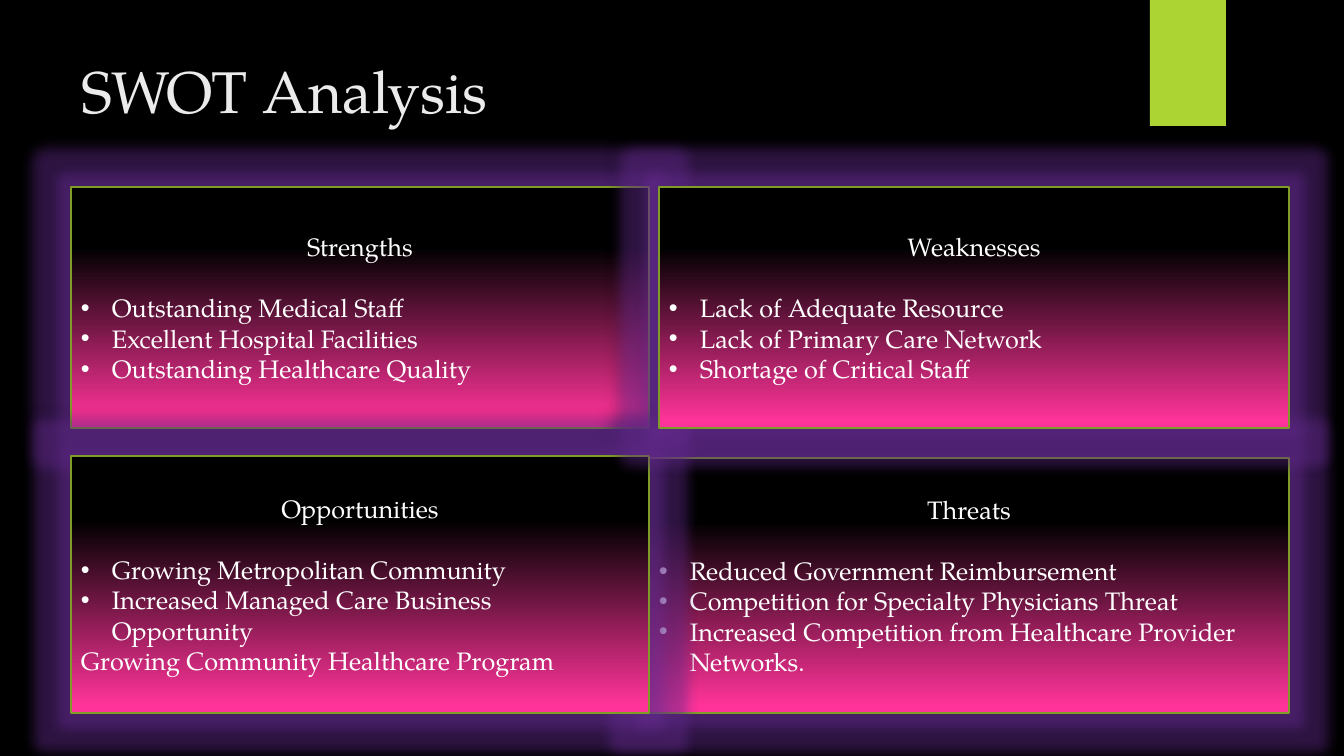
import lxml.etree
import pptx
import pptx.dml.color
import pptx.enum.shapes
import pptx.enum.text
import pptx.oxml.ns
import pptx.util

SCALE = 12192000 / 1344
FONT = "TeX Gyre Pagella"
BLACK = pptx.dml.color.RGBColor(0x00, 0x00, 0x00)
WHITE = pptx.dml.color.RGBColor(0xFF, 0xFF, 0xFF)
PALE = pptx.dml.color.RGBColor(0xEB, 0xEB, 0xEB)
LIME = pptx.dml.color.RGBColor(0xAC, 0xD4, 0x33)
OLIVE = pptx.dml.color.RGBColor(0x7F, 0x9D, 0x26)
PINK = pptx.dml.color.RGBColor(0xFF, 0x33, 0x99)
PURPLE = pptx.dml.color.RGBColor(0x70, 0x30, 0xA0)

QUADRANTS = [
    ("Strengths", (71, 187, 578, 241),
     ["Outstanding Medical Staff", "Excellent Hospital Facilities",
      "Outstanding Healthcare Quality"], ""),
    ("Threats", (649, 458, 640, 255),
     ["Reduced Government Reimbursement",
      "Competition for Specialty Physicians Threat",
      "Increased Competition from Healthcare Provider Networks."], ""),
    ("Opportunities", (71, 456, 578, 257),
     ["Growing Metropolitan Community",
      "Increased Managed Care Business Opportunity"],
     "Growing Community Healthcare Program"),
    ("Weaknesses", (659, 187, 630, 241),
     ["Lack of Adequate Resource", "Lack of Primary Care Network",
      "Shortage of Critical Staff"], ""),
]


def px(length):
    """Turn pixels into EMU."""
    return pptx.util.Emu(round(length * SCALE))


def add_element(parent, tag, **attributes):
    """Append a DrawingML element to its parent and return it."""
    element = lxml.etree.SubElement(parent, pptx.oxml.ns.qn(tag))
    for name, value in attributes.items():
        element.set(name, str(value))
    return element


def style_font(paragraph, size, color):
    """Set the typeface, size and colour of a paragraph."""
    paragraph.font.name = FONT
    paragraph.font.size = pptx.util.Pt(size)
    paragraph.font.color.rgb = color


def add_rectangle(page, frame):
    """Add a rectangle without a shadow in the given frame."""
    box = page.shapes.add_shape(
        pptx.enum.shapes.MSO_SHAPE.RECTANGLE, *map(px, frame))
    box.shadow.inherit = False
    return box


def add_effects(box):
    """Give a box its purple glow and soft dark shadow."""
    effects = box._element.spPr.find(pptx.oxml.ns.qn("a:effectLst"))
    glow = add_element(effects, "a:glow", rad=pptx.util.Pt(18))
    shadow = add_element(
        effects, "a:outerShdw", blurRad=pptx.util.Pt(6),
        dist=pptx.util.Pt(3), dir=225 * 60000, algn="br", rotWithShape=0)
    for effect, color in ((glow, PURPLE), (shadow, BLACK)):
        tint = add_element(effect, "a:srgbClr", val=color)
        add_element(tint, "a:alpha", val=40000)


def add_bullet(paragraph):
    """Give a paragraph a round bullet and a hanging indent."""
    properties = paragraph._p.get_or_add_pPr()
    properties.set("marL", str(px(31)))
    properties.set("indent", str(-px(31)))
    add_element(properties, "a:buFont", typeface="Arial")
    add_element(properties, "a:buChar", char="•")


def add_title(page, frame):
    """Place and format the slide title."""
    title = page.shapes.title
    title.left, title.top, title.width, title.height = map(px, frame)
    title.text_frame.text = "SWOT Analysis"
    title.text_frame.vertical_anchor = pptx.enum.text.MSO_ANCHOR.TOP
    paragraph = title.text_frame.paragraphs[0]
    paragraph.alignment = pptx.enum.text.PP_ALIGN.LEFT
    style_font(paragraph, 42, PALE)


def add_tab(page, frame):
    """Add the lime tab that hangs from the top edge."""
    tab = add_rectangle(page, frame)
    tab.fill.solid()
    tab.fill.fore_color.rgb = LIME
    tab.line.fill.background()


def add_quadrant(page, frame, heading, points, closing):
    """Add one glowing box with its heading, bullets and closing line."""
    box = add_rectangle(page, frame)
    box.fill.gradient()
    box.fill.gradient_angle = 270
    for stop, position, color in zip(
            box.fill.gradient_stops, (0.25, 0.97), (BLACK, PINK)):
        stop.position = position
        stop.color.rgb = color
    box.line.color.rgb = OLIVE
    box.line.width = pptx.util.Pt(1.5)
    add_effects(box)

    text = box.text_frame
    text.word_wrap = True
    text.vertical_anchor = pptx.enum.text.MSO_ANCHOR.MIDDLE
    text.text = "\n".join([heading, *points] + ([closing] if closing else []))
    for index, paragraph in enumerate(text.paragraphs):
        paragraph.alignment = pptx.enum.text.PP_ALIGN.LEFT
        if 1 <= index <= len(points):
            add_bullet(paragraph)
        style_font(paragraph, 18, WHITE)
    text.paragraphs[0].alignment = pptx.enum.text.PP_ALIGN.CENTER
    text.paragraphs[0].space_after = pptx.util.Pt(22)


def main():
    """Build the SWOT slide and save it."""
    deck = pptx.Presentation()
    deck.slide_width, deck.slide_height = px(1344), px(756)
    page = deck.slides.add_slide(deck.slide_layouts.get_by_name("Title Only"))
    page.background.fill.solid()
    page.background.fill.fore_color.rgb = BLACK
    add_tab(page, (1150, 0, 76, 126))
    add_title(page, (71, 50, 1037, 154))
    for heading, frame, points, closing in QUADRANTS:
        add_quadrant(page, frame, heading, points, closing)
    deck.save("out.pptx")


if __name__ == "__main__":
    main()
